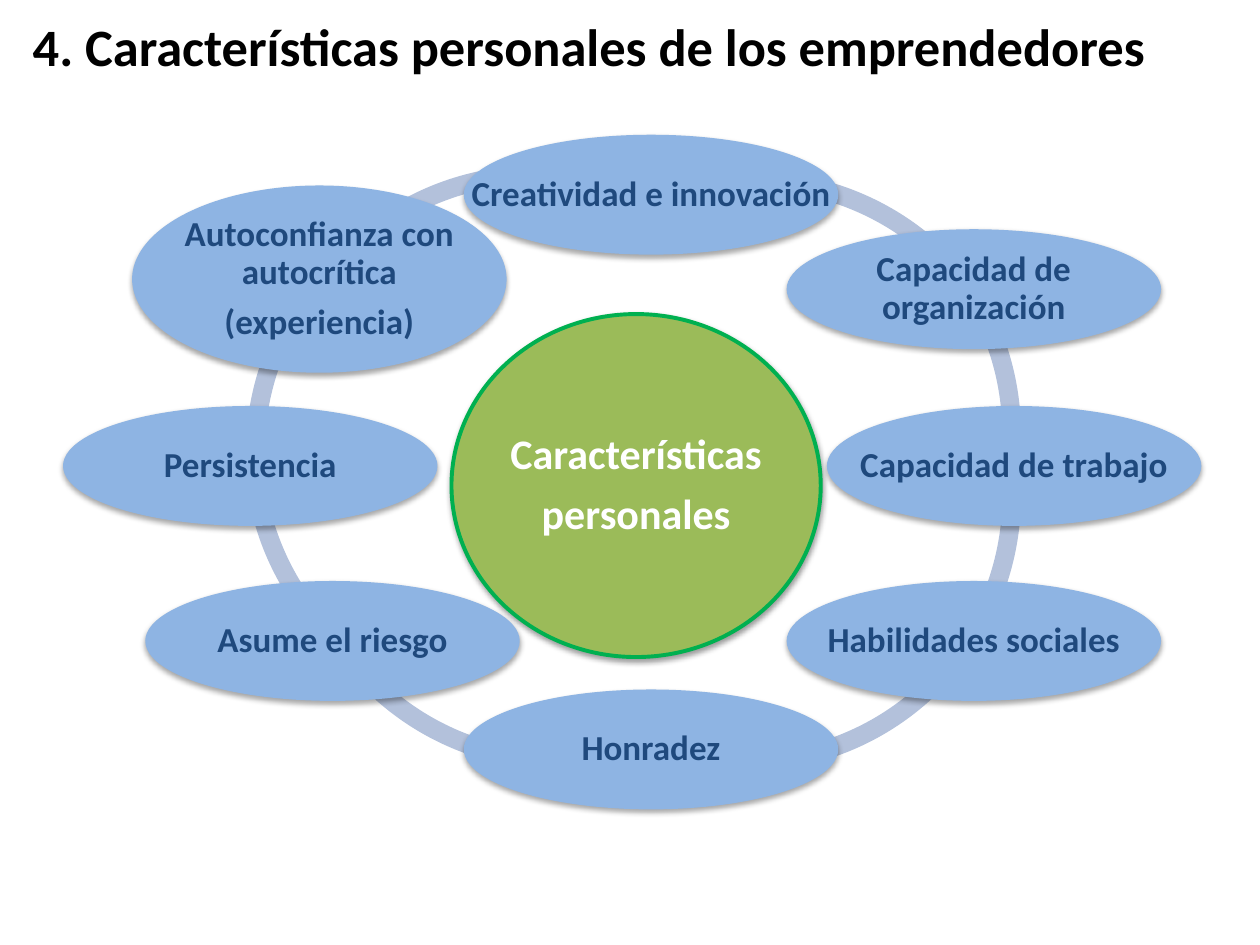
from lxml import etree
from pptx import Presentation
from pptx.dml.color import RGBColor
from pptx.enum.shapes import MSO_SHAPE
from pptx.enum.text import MSO_ANCHOR, PP_ALIGN
from pptx.oxml.ns import qn
from pptx.util import Pt

OVAL, BLOCK_ARC = MSO_SHAPE.OVAL, MSO_SHAPE.BLOCK_ARC
MIDDLE = MSO_ANCHOR.MIDDLE
LEFT, CENTER = PP_ALIGN.LEFT, PP_ALIGN.CENTER

BLACK = RGBColor(0x00, 0x00, 0x00)
WHITE = RGBColor(0xFF, 0xFF, 0xFF)
ARC_BLUE = RGBColor(0xB3, 0xC1, 0xDB)
NODE_BLUE = RGBColor(0x8E, 0xB4, 0xE3)
NAVY = RGBColor(0x1F, 0x49, 0x7D)
OLIVE = RGBColor(0x9B, 0xBB, 0x59)
GREEN = RGBColor(0x00, 0xB0, 0x50)

FONT = "Calibri"
ARC_SIZE = 315.5
ARC_THICKNESS = 0.034
UNITS_PER_DEGREE = 0.6
NODE_WIDTH, NODE_HEIGHT = 214, 68.5

ARCS = [
    (148.5, 94.5, 216.86, 295.07),
    (140.5, 101, 178.72, 221.76),
    (139.5, 98, 134.21, 176.18),
    (162, 124.5, 70.31, 147.16),
    (268, 125.5, 32.6, 110.28),
    (268, 126, 353.37, 32.32),
    (268, 90, 327.72, 6.67),
    (273, 98, 247.88, 324.4),
]

NODES = [
    (265, 77, NODE_HEIGHT, ["Creatividad e innovación"]),
    (449.5, 131, NODE_HEIGHT, ["Capacidad de\vorganización"]),
    (472.5, 232, NODE_HEIGHT, ["Capacidad de trabajo"]),
    (449.5, 332, NODE_HEIGHT, ["Habilidades sociales"]),
    (265, 394, NODE_HEIGHT, ["Honradez"]),
    (83, 332, NODE_HEIGHT, ["Asume el riesgo"]),
    (36, 232, NODE_HEIGHT, ["Persistencia"]),
    (75.5, 106, 107, ["Autoconfianza con\vautocrítica", "(experiencia)"]),
]


def set_font(p, size, color):
    p.font.name = FONT
    p.font.size = Pt(size)
    p.font.bold = True
    p.font.color.rgb = color


def add_title(s, text):
    sp = s.shapes.title
    sp.left, sp.top, sp.width, sp.height = Pt(11.5), Pt(3.5), Pt(674.5), Pt(45.5)
    tf = sp.text_frame
    tf.text = text
    tf.vertical_anchor = MIDDLE
    p = tf.paragraphs[0]
    p.alignment = LEFT
    set_font(p, 30, BLACK)


def add_filled(s, kind, left, top, width, height, fill):
    sp = s.shapes.add_shape(kind, Pt(left), Pt(top), Pt(width), Pt(height))
    sp.shadow.inherit = False
    sp.fill.solid()
    sp.fill.fore_color.rgb = fill
    sp.line.fill.background()
    return sp


def add_arc(s, left, top, start, end):
    sp = add_filled(s, BLOCK_ARC, left, top, ARC_SIZE, ARC_SIZE, ARC_BLUE)
    sp.adjustments[0] = start * UNITS_PER_DEGREE
    sp.adjustments[1] = end * UNITS_PER_DEGREE
    sp.adjustments[2] = ARC_THICKNESS


def add_shadow(sp, opacity, distance):
    effects = sp.element.spPr.find(qn("a:effectLst"))
    shadow = etree.SubElement(
        effects, qn("a:outerShdw"), blurRad=str(Pt(3.1)),
        dist=str(Pt(distance)), dir="5400000", rotWithShape="0")
    color = etree.SubElement(shadow, qn("a:srgbClr"), val=str(BLACK))
    etree.SubElement(color, qn("a:alpha"), val=str(opacity * 1000))


def add_oval(s, left, top, width, height, lines, fill, color, size):
    sp = add_filled(s, OVAL, left, top, width, height, fill)
    tf = sp.text_frame
    tf.word_wrap = False
    tf.vertical_anchor = MIDDLE
    tf.margin_left = tf.margin_right = tf.margin_top = tf.margin_bottom = 0
    tf.text = "\n".join(lines)
    for i, p in enumerate(tf.paragraphs):
        p.alignment = CENTER
        p.line_spacing = 0.9
        p.space_before = Pt(0.35 * size if i else 0)
        set_font(p, size, color)
    return sp


def main():
    prs = Presentation()
    prs.slide_width, prs.slide_height = Pt(720), Pt(540)
    s = prs.slides.add_slide(prs.slide_layouts[5])
    add_title(s, "4. Características personales de los emprendedores")
    for arc in ARCS:
        add_arc(s, *arc)
    hub = add_oval(s, 258, 179.5, 211, 196, ["Características", "personales"],
                   OLIVE, WHITE, 24)
    hub.line.color.rgb = GREEN
    hub.line.width = Pt(2.25)
    add_shadow(hub, 38, 1.6)
    for left, top, height, lines in NODES:
        node = add_oval(s, left, top, NODE_WIDTH, height, lines,
                        NODE_BLUE, NAVY, 20)
        add_shadow(node, 35, 1.8)
    prs.save("out.pptx")


if __name__ == "__main__":
    main()
